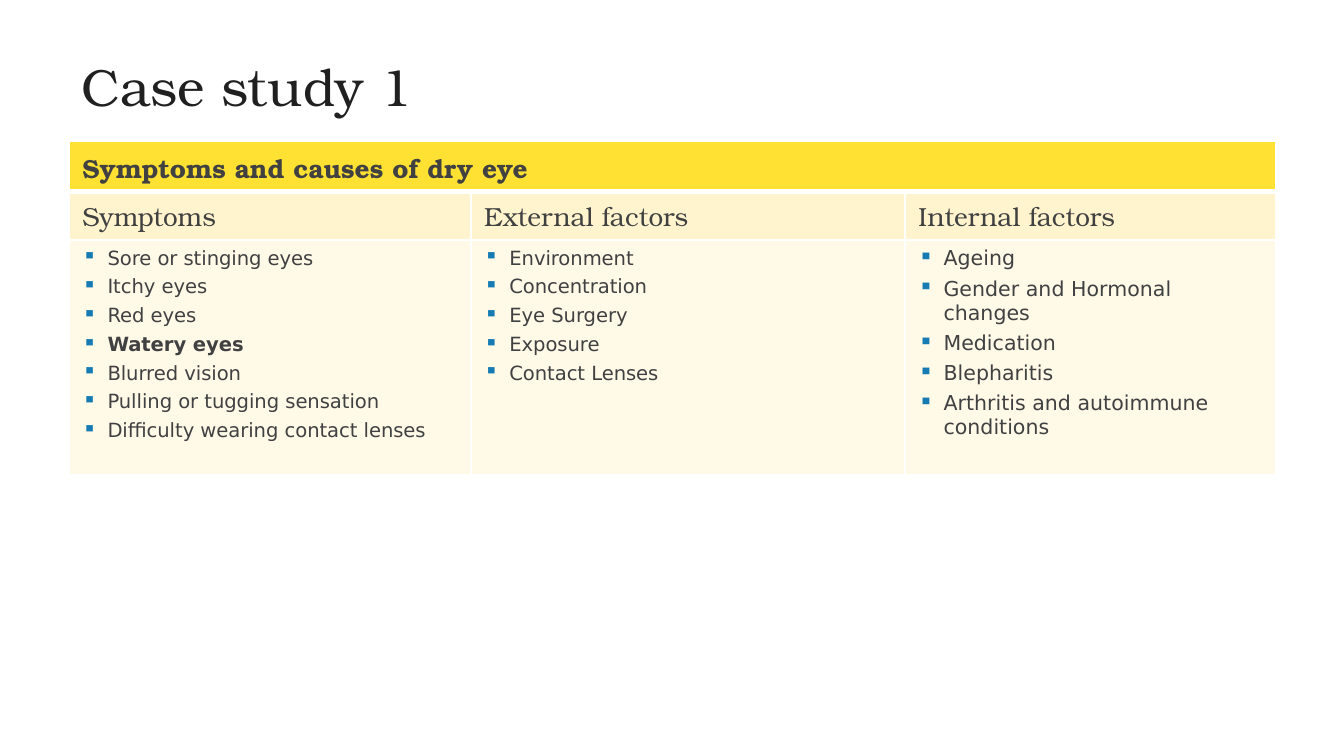
import pptx
import pptx.dml.color
import pptx.enum.text
import pptx.oxml.ns
import pptx.util
from lxml import etree

Pt = pptx.util.Pt
qn = pptx.oxml.ns.qn

COLOURS = {
    "title": "202021", "body": "414142", "bullet": "167BB3", "border": "FFFFFF",
    "banner": "FFE133", "heading": "FFF4CE", "list": "FFF9E8",
}
SERIF, SANS = "TeX Gyre Bonum", "DejaVu Sans"

BANNER = "Symptoms and causes of dry eye"
EMPHASIS = "Watery eyes"
# heading, column width, list text size, list entries
FACTORS = [
    ("Symptoms", 215.3, 10.5,
     ["Sore or stinging eyes", "Itchy eyes", "Red eyes", EMPHASIS, "Blurred vision",
      "Pulling or tugging sensation", "Difficulty wearing contact lenses"]),
    ("External factors", 232.6, 10.5,
     ["Environment", "Concentration", "Eye Surgery", "Exposure", "Contact Lenses"]),
    ("Internal factors", 198.6, 11,
     ["Ageing", "Gender and Hormonal changes", "Medication", "Blepharitis",
      "Arthritis and autoimmune conditions"]),
]
ROW_HEIGHTS = [26.8, 26, 125.5]


def rgb(name):
    return pptx.dml.color.RGBColor.from_string(COLOURS[name])


class Deck:
    """Holds the text style and the current slide."""

    def __init__(self, width, height):
        self.prs = pptx.Presentation()
        self.prs.slide_width, self.prs.slide_height = Pt(width), Pt(height)
        self.s = self.prs.slides.add_slide(self.prs.slide_layouts[6])

    def run(self, p, text, size, font=SERIF, colour="body", bold=False):
        r = p.add_run()
        r.text = text
        for key, value in {"name": font, "size": Pt(size), "bold": bold}.items():
            setattr(r.font, key, value)
        r.font.color.rgb = rgb(colour)

    def title(self, text, x, y, w, h):
        tf = self.s.shapes.add_textbox(Pt(x), Pt(y), Pt(w), Pt(h)).text_frame
        tf.word_wrap = True
        tf.vertical_anchor = pptx.enum.text.MSO_ANCHOR.MIDDLE
        self.run(tf.paragraphs[0], text, 28, colour="title")

    def table(self, x, y, widths, heights):
        sp = self.s.shapes.add_table(len(heights), len(widths), Pt(x), Pt(y),
                                     Pt(sum(widths)), Pt(sum(heights)))
        for column, width in zip(sp.table.columns, widths):
            column.width = Pt(width)
        for row, height in zip(sp.table.rows, heights):
            row.height = Pt(height)
        return sp.table

    def cell(self, cell, fill, top=1, bottom=1):
        """Fill a cell and border it; top and bottom are line widths."""
        tcPr = cell._tc.get_or_add_tcPr()
        for side, width in {"L": 1, "R": 1, "T": top, "B": bottom}.items():
            ln = etree.SubElement(tcPr, qn("a:ln" + side), w=str(Pt(width)))
            solid = etree.SubElement(ln, qn("a:solidFill"))
            etree.SubElement(solid, qn("a:srgbClr"), val=COLOURS["border"])
        cell.fill.solid()
        cell.fill.fore_color.rgb = rgb(fill)

    def bullets(self, tf, entries, size):
        for i, entry in enumerate(entries):
            p = tf.add_paragraph() if i else tf.paragraphs[0]
            if i:
                p.space_before = Pt(0.3 * size)
            pPr = p._p.get_or_add_pPr()
            pPr.set("marL", str(Pt(13.5)))
            pPr.set("indent", str(-Pt(13.5)))
            colour = etree.SubElement(pPr, qn("a:buClr"))
            etree.SubElement(colour, qn("a:srgbClr"), val=COLOURS["bullet"])
            etree.SubElement(pPr, qn("a:buChar"), char="▪")
            self.run(p, entry, size, SANS, bold=entry == EMPHASIS)


def main():
    deck = Deck(720, 405)
    deck.title("Case study 1", 36.7, 24.5, 646.5, 42.5)

    table = deck.table(36.9, 75.9, [width for _, width, _, _ in FACTORS], ROW_HEIGHTS)
    for col, (heading, _, size, entries) in enumerate(FACTORS):
        deck.cell(table.cell(0, col), "banner", bottom=3)
        deck.cell(table.cell(1, col), "heading", top=3)
        deck.cell(table.cell(2, col), "list")
        deck.run(table.cell(1, col).text_frame.paragraphs[0], heading, 14)
        deck.bullets(table.cell(2, col).text_frame, entries, size)
    banner = table.cell(0, 0)
    banner.merge(table.cell(0, len(FACTORS) - 1))
    deck.run(banner.text_frame.paragraphs[0], BANNER, 14, bold=True)

    deck.prs.save("out.pptx")


if __name__ == "__main__":
    main()
